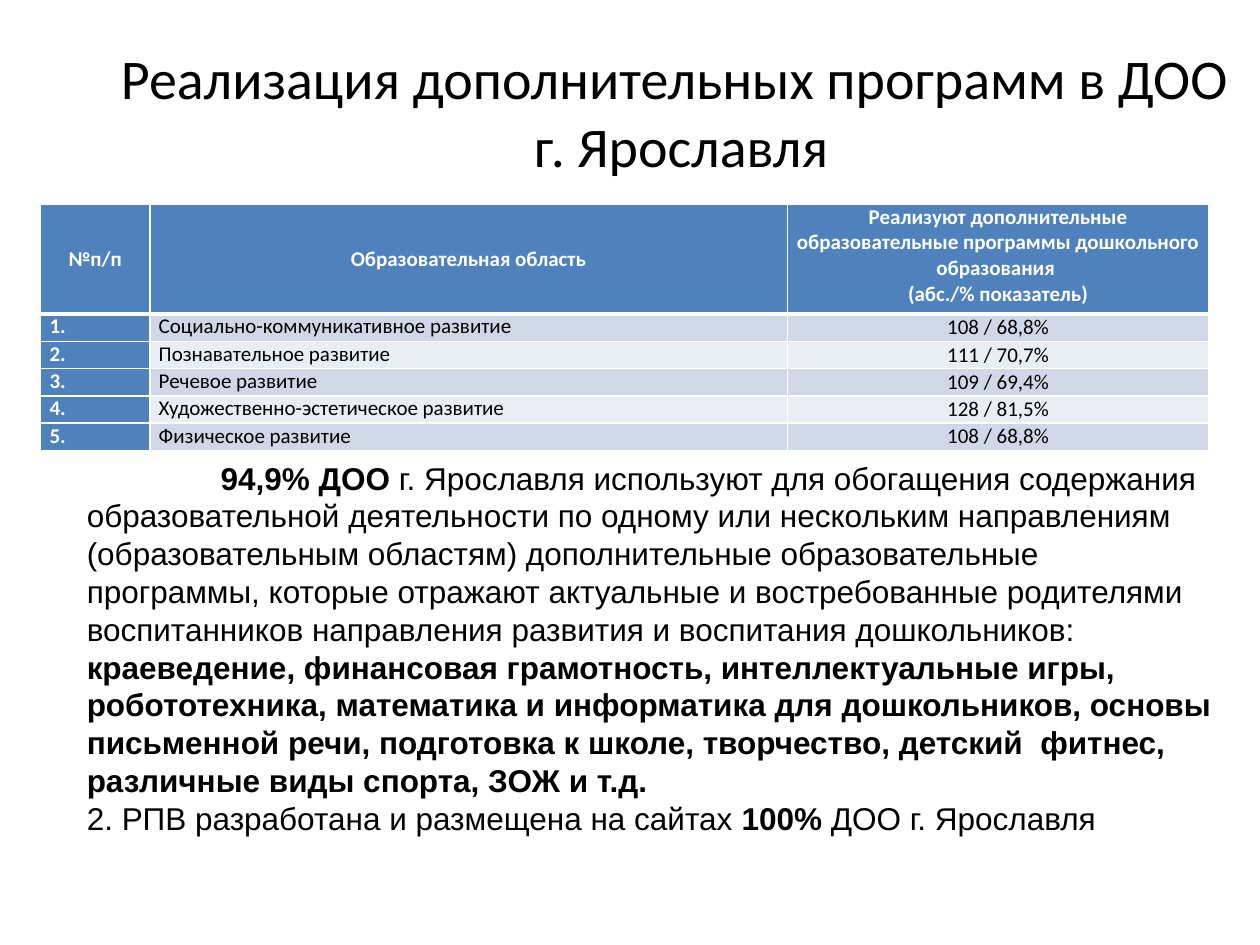
from lxml import etree
from pptx import Presentation
from pptx.dml.color import RGBColor
from pptx.enum.text import MSO_ANCHOR, PP_ALIGN
from pptx.oxml.ns import qn
from pptx.util import Cm, Pt

CENTER, JUSTIFY, LEFT = PP_ALIGN.CENTER, PP_ALIGN.JUSTIFY, PP_ALIGN.LEFT
TOP, MIDDLE = MSO_ANCHOR.TOP, MSO_ANCHOR.MIDDLE

BLACK = RGBColor(0x00, 0x00, 0x00)
WHITE = RGBColor(0xFF, 0xFF, 0xFF)
BLUE = RGBColor(0x4F, 0x81, 0xBD)
BANDS = [RGBColor(0xD0, 0xD8, 0xE8), RGBColor(0xE9, 0xED, 0xF4)]

TITLE = ["Реализация дополнительных программ в ДОО ", "г. Ярославля"]
HEADERS = [
    ["№п/п"],
    ["Образовательная область"],
    ["Реализуют дополнительные образовательные программы дошкольного образования ",
     "(абс./% показатель)"],
]
AREAS = [
    ("Социально-коммуникативное развитие", "108 / 68,8%"),
    ("Познавательное развитие", "111 / 70,7%"),
    ("Речевое развитие", "109 / 69,4%"),
    ("Художественно-эстетическое развитие", "128 / 81,5%"),
    ("Физическое развитие", "108 / 68,8%"),
]
SUMMARY = [
    [("94,9% ДОО ", True),
     ("г. Ярославля используют для обогащения содержания образовательной деятельности "
      "по одному или нескольким направлениям (образовательным областям) дополнительные "
      "образовательные программы, которые отражают актуальные и востребованные родителями "
      "воспитанников направления развития и воспитания дошкольников: ", False),
     ("краеведение, финансовая грамотность, интеллектуальные игры, робототехника, "
      "математика и информатика для дошкольников, основы письменной речи, подготовка "
      "к школе, творчество, детский  фитнес, различные виды спорта, ЗОЖ и т.д.", True)],
    [("2. РПВ разработана и размещена на сайтах ", False),
     ("100%", True),
     (" ДОО г. Ярославля", False)],
]
COLUMN_WIDTHS = [Cm(2.2), Cm(12.85), Cm(8.5)]
HEADER_HEIGHT, ROW_HEIGHT = Cm(2.21), Cm(0.55)


def write(frame, paragraphs, font, size, color, alignment, indents=None, spacing=None):
    for index, runs in enumerate(paragraphs):
        paragraph = frame.paragraphs[0] if index == 0 else frame.add_paragraph()
        paragraph.alignment = alignment
        if spacing:
            paragraph.line_spacing = spacing
        if indents:
            properties = paragraph._p.get_or_add_pPr()
            properties.set("marL", "0")
            properties.set("indent", str(indents[index]))
        for text, bold in runs:
            run = paragraph.add_run()
            run.text = text
            run.font.name = font
            run.font.size = size
            run.font.bold = bold
            run.font.color.rgb = color


def add_text_box(slide, left, top, width, height, anchor):
    frame = slide.shapes.add_textbox(left, top, width, height).text_frame
    frame.word_wrap = True
    frame.vertical_anchor = anchor
    return frame


def set_borders(cell, top, bottom):
    properties = cell._tc.get_or_add_tcPr()
    for side, width in (("L", 1), ("R", 1), ("T", top), ("B", bottom)):
        line = etree.SubElement(properties, qn(f"a:ln{side}"), w=str(Pt(width)))
        fill = etree.SubElement(line, qn("a:solidFill"))
        etree.SubElement(fill, qn("a:srgbClr"), val=str(WHITE))


def fill_cell(cell, lines, fill, color, bold, alignment, anchor, top=1, bottom=1):
    set_borders(cell, top, bottom)
    cell.fill.solid()
    cell.fill.fore_color.rgb = fill
    cell.margin_left = cell.margin_right = Cm(0.18)
    cell.margin_top = cell.margin_bottom = 0
    cell.vertical_anchor = anchor
    write(cell.text_frame, [[(line, bold)] for line in lines],
          "Calibri", Pt(12), color, alignment)


def add_area_table(slide):
    height = HEADER_HEIGHT + ROW_HEIGHT * len(AREAS)
    table = slide.shapes.add_table(len(AREAS) + 1, len(HEADERS), Cm(0.82), Cm(4.12),
                                   sum(COLUMN_WIDTHS), height).table
    table.first_row = table.horz_banding = False
    for column, width in zip(table.columns, COLUMN_WIDTHS):
        column.width = width
    for index, row in enumerate(table.rows):
        row.height = ROW_HEIGHT if index else HEADER_HEIGHT
    for column, (lines, anchor) in enumerate(zip(HEADERS, (MIDDLE, MIDDLE, TOP))):
        fill_cell(table.cell(0, column), lines, BLUE, WHITE, True, CENTER, anchor, bottom=3)
    for row, (area, share) in enumerate(AREAS, 1):
        band = BANDS[(row - 1) % 2]
        top = 3 if row == 1 else 1
        fill_cell(table.cell(row, 0), [f"{row}."], BLUE, WHITE, True, JUSTIFY, TOP, top)
        fill_cell(table.cell(row, 1), [area], band, BLACK, False, JUSTIFY, TOP, top)
        fill_cell(table.cell(row, 2), [share], band, BLACK, False, CENTER, MIDDLE, top)


def main():
    presentation = Presentation()
    presentation.slide_width, presentation.slide_height = Cm(25.4), Cm(19.05)
    slide = presentation.slides.add_slide(presentation.slide_layouts[6])
    add_area_table(slide)
    title = add_text_box(slide, Cm(0.82), Cm(0.74), Cm(24.58), Cm(3), MIDDLE)
    write(title, [[(line, False)] for line in TITLE], "Calibri", Pt(32), BLACK, CENTER,
          indents=[Cm(1.25), Cm(1.25)])
    summary = add_text_box(slide, Cm(1.5), Cm(9.12), Cm(23.2), Cm(8.7), TOP)
    write(summary, SUMMARY, "Arial", Pt(18), BLACK, LEFT,
          indents=[Cm(2.7), Cm(0)], spacing=Pt(21.6))
    presentation.save("out.pptx")


if __name__ == "__main__":
    main()
